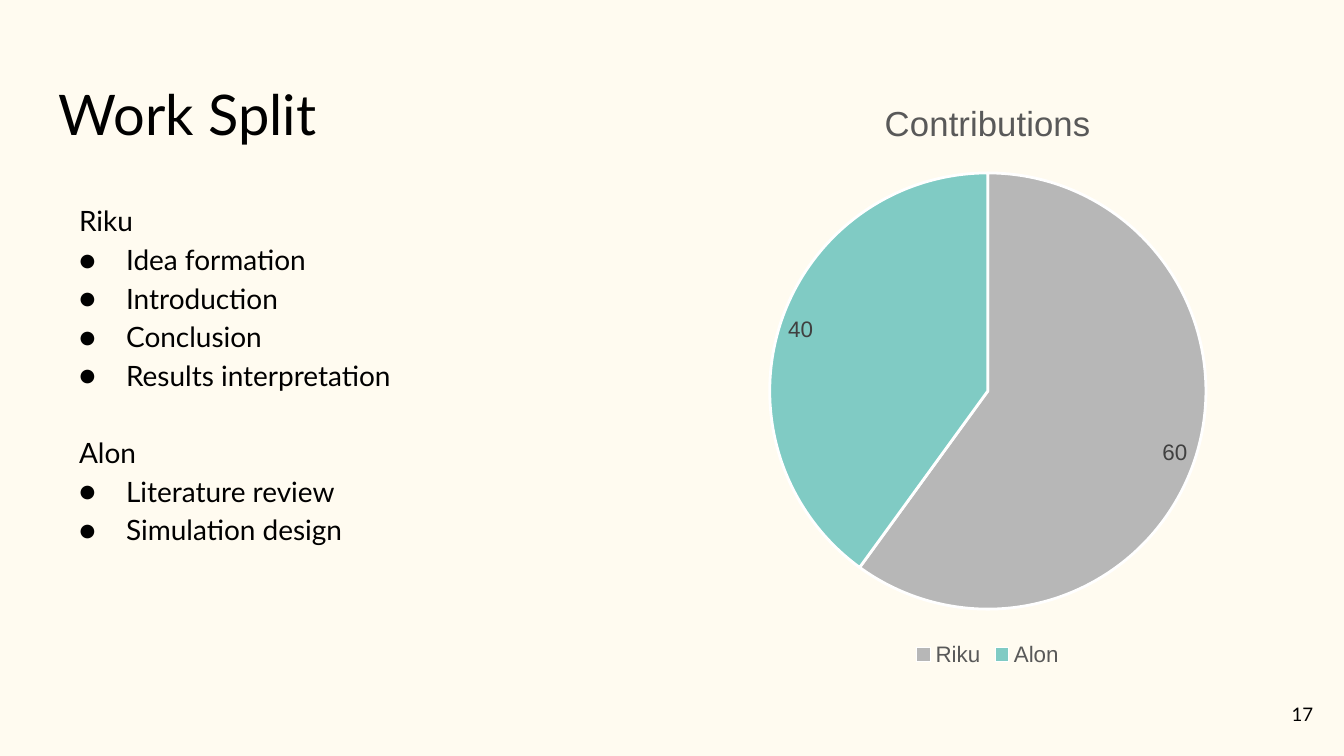
from dataclasses import dataclass

from lxml import etree
from pptx import Presentation
from pptx.chart.data import CategoryChartData
from pptx.dml.color import RGBColor
from pptx.enum.chart import XL_CHART_TYPE, XL_LABEL_POSITION, XL_LEGEND_POSITION
from pptx.enum.text import MSO_ANCHOR, PP_ALIGN
from pptx.oxml.ns import qn
from pptx.slide import Slide
from pptx.text.text import Font, TextFrame, _Paragraph
from pptx.util import Inches, Pt

COLORS = {
    "background": "FFFBF0",
    "text": "000000",
    "chart_text": "595959",
    "label": "404040",
    "border": "FFFFFF",
}


@dataclass
class Member:
    name: str
    share: int
    color: str
    tasks: list[str]


MEMBERS = [
    Member("Riku", 60, "B7B7B7",
           ["Idea formation", "Introduction", "Conclusion", "Results interpretation"]),
    Member("Alon", 40, "80CBC4", ["Literature review", "Simulation design"]),
]


def rgb(name: str) -> RGBColor:
    return RGBColor.from_string(COLORS[name])


def set_font(font: Font, size: float, color: str, family: str) -> None:
    font.size = Pt(size)
    font.name = family
    font.bold = False
    font.color.rgb = rgb(color)


def add_text_area(slide: Slide, left: float, top: float, width: float, height: float) -> TextFrame:
    frame = slide.shapes.add_textbox(
        Inches(left), Inches(top), Inches(width), Inches(height)).text_frame
    frame.word_wrap = True
    frame.margin_left = frame.margin_right = Inches(0.1)
    frame.margin_top = frame.margin_bottom = Inches(0.1)
    return frame


def write(paragraph: _Paragraph, text: str, size: float) -> None:
    paragraph.text = text
    set_font(paragraph.font, size, "text", "Lato")


def indent(paragraph: _Paragraph, left: float, first: float, bullet: str = "") -> None:
    """Set the left and first-line indents, with a bullet if one is given."""
    properties = paragraph._p.get_or_add_pPr()
    properties.set("marL", str(Inches(left)))
    properties.set("indent", str(Inches(first)))
    if bullet:
        for mark in (etree.Element(qn("a:buSzPts"), val="1500"),
                     etree.Element(qn("a:buFont"), typeface="Lato"),
                     etree.Element(qn("a:buChar"), char=bullet)):
            properties.insert_element_before(mark, "a:tabLst", "a:defRPr", "a:extLst")


def add_task_lists(slide: Slide) -> None:
    frame = add_text_area(slide, 0.34, 1.38, 4.7, 2.81)
    for number, member in enumerate(MEMBERS):
        heading = frame.add_paragraph() if number else frame.paragraphs[0]
        write(heading, member.name, 15)
        heading.line_spacing = 1.15
        if number:
            heading.space_before = Pt(20.7)
        indent(heading, 0.15, 0)
        for task in member.tasks:
            item = frame.add_paragraph()
            write(item, task, 15)
            item.line_spacing = 1.15
            indent(item, 0.5, -0.35, "●")


def add_contributions(slide: Slide) -> None:
    data = CategoryChartData()
    data.categories = [member.name for member in MEMBERS]
    data.add_series("Contributions", [member.share for member in MEMBERS])
    chart = slide.shapes.add_chart(
        XL_CHART_TYPE.PIE, Inches(5.04), Inches(0.56), Inches(4.62), Inches(4.44), data).chart
    set_font(chart.font, 10, "text", "Arial")

    chart.has_title = True
    heading = chart.chart_title.text_frame.paragraphs[0]
    heading.text = "Contributions"
    set_font(heading.font, 18.6, "chart_text", "Arial")
    chart.chart_title.include_in_layout = False

    chart.has_legend = True
    chart.legend.position = XL_LEGEND_POSITION.BOTTOM
    chart.legend.include_in_layout = False
    set_font(chart.legend.font, 12, "chart_text", "Arial")

    pie = chart.plots[0]
    pie.vary_by_categories = True
    contributions = pie.series[0]
    labels = contributions.data_labels
    labels.show_value = True
    labels.show_percentage = False
    labels.position = XL_LABEL_POSITION.BEST_FIT
    set_font(labels.font, 12, "label", "Arial")

    for number, member in enumerate(MEMBERS):
        wedge = contributions.points[number].format
        wedge.fill.solid()
        wedge.fill.fore_color.rgb = RGBColor.from_string(member.color)
        wedge.line.color.rgb = rgb("border")
        wedge.line.width = Pt(1.5)


def main() -> None:
    deck = Presentation()
    deck.slide_width = Inches(10)
    deck.slide_height = deck.slide_width * 9 // 16
    slide = deck.slides.add_slide(deck.slide_layouts[6])
    slide.background.fill.solid()
    slide.background.fill.fore_color.rgb = rgb("background")

    title = add_text_area(slide, 0.34, 0.49, 9.32, 0.67)
    write(title.paragraphs[0], "Work Split", 30)

    page = add_text_area(slide, 9.27, 5.1, 0.6, 0.43)
    page.vertical_anchor = MSO_ANCHOR.MIDDLE
    write(page.paragraphs[0], "17", 10)
    page.paragraphs[0].alignment = PP_ALIGN.RIGHT

    add_contributions(slide)
    add_task_lists(slide)
    deck.save("out.pptx")


if __name__ == "__main__":
    main()
